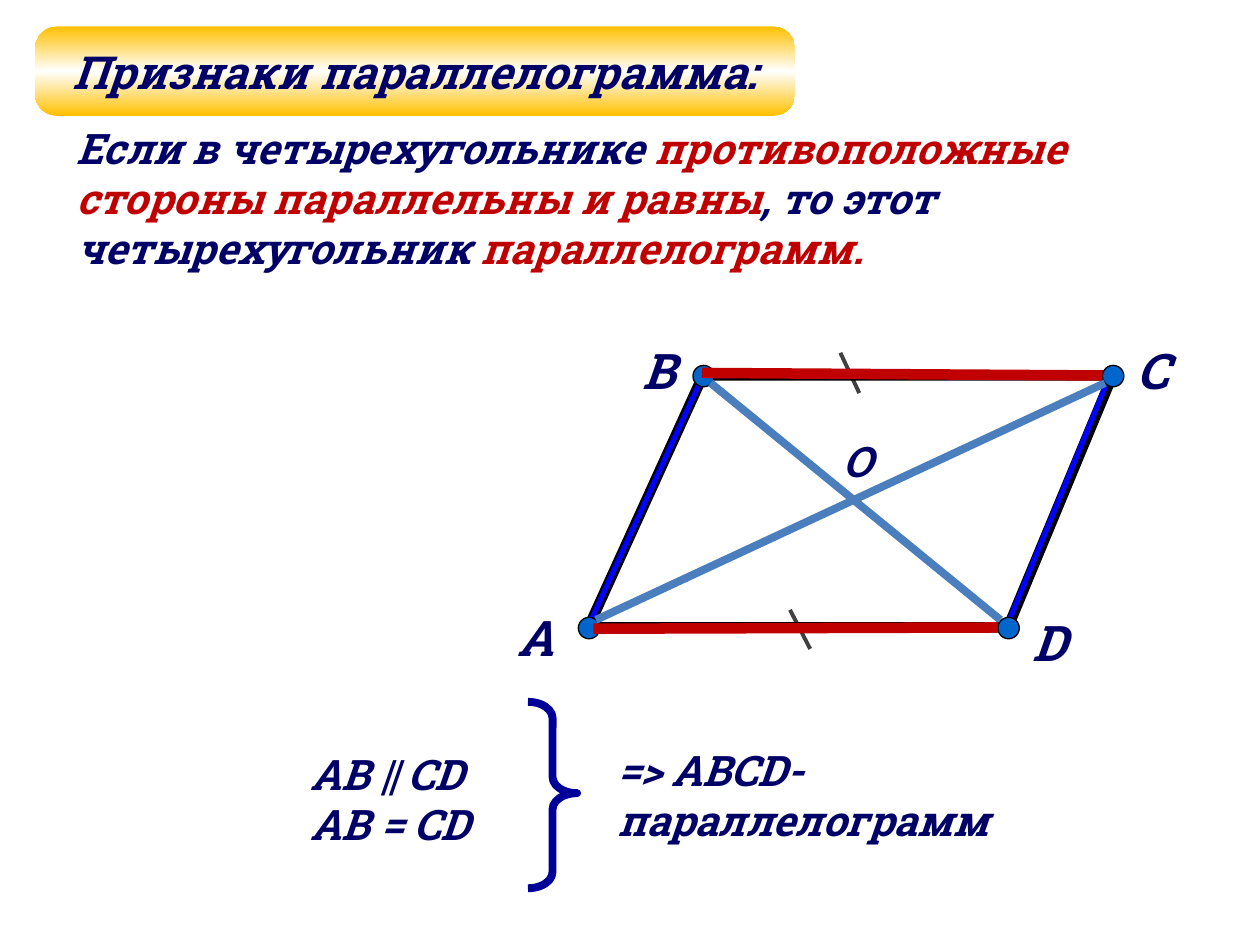
from copy import deepcopy

from lxml import etree
from pptx import Presentation
from pptx.dml.color import RGBColor
from pptx.enum.shapes import MSO_CONNECTOR, MSO_SHAPE
from pptx.enum.text import MSO_ANCHOR, MSO_AUTO_SIZE, PP_ALIGN
from pptx.oxml.ns import qn
from pptx.util import Inches, Pt

NAVY = RGBColor(0x00, 0x00, 0x66)
RED = RGBColor(0xC0, 0x00, 0x00)
BLACK = RGBColor(0x00, 0x00, 0x00)
WHITE = RGBColor(0xFF, 0xFF, 0xFF)
GOLD = RGBColor(0xFF, 0xC0, 0x00)
BRACE_BLUE = RGBColor(0x00, 0x00, 0x99)
SIDE_BLUE = RGBColor(0x00, 0x00, 0xFF)
POINT_BLUE = RGBColor(0x00, 0x66, 0xCC)
DIAGONAL_BLUE = RGBColor(0x4B, 0x7E, 0xBC)
TICK_GRAY = RGBColor(0x40, 0x40, 0x40)
FONT = "Roboto Slab"

presentation = Presentation()
presentation.slide_width = Inches(10)
presentation.slide_height = Inches(7.5)
slide = presentation.slides.add_slide(presentation.slide_layouts[5])
shapes = slide.shapes


def write_text(shape, paragraphs, size, wrap=True):
    text_frame = shape.text_frame
    text_frame.word_wrap = wrap
    for index, pieces in enumerate(paragraphs):
        paragraph = text_frame.paragraphs[0] if index == 0 else text_frame.add_paragraph()
        for text, color in pieces:
            run = paragraph.add_run()
            run.text = text
            run.font.name = FONT
            run.font.size = Pt(size)
            run.font.bold = True
            run.font.italic = True
            run.font.color.rgb = color


def add_line(start, end, color, width):
    line = shapes.add_connector(
        MSO_CONNECTOR.STRAIGHT, *[Inches(value) for value in (*start, *end)]
    )
    line.line.color.rgb = color
    line.line.width = Pt(width)
    etree.SubElement(line._element.spPr, qn("a:effectLst"))


add_line((6.27, 4.84), (6.43, 5.15), TICK_GRAY, 2.25)
add_line((6.67, 2.8), (6.82, 3.12), TICK_GRAY, 2.25)

theorem = [
    ("Если в четырехугольнике ", NAVY),
    ("противоположные стороны параллельны и равны", RED),
    (", то этот четырехугольник ", NAVY),
    ("параллелограмм.", RED),
]
text_blocks = [
    (0.51, 0.92, 8.94, 1.31, [theorem]),
    (2.37, 5.89, 2.66, 0.91, [[("AB || CD", NAVY)], [("AB = CD", NAVY)]]),
    (4.8, 5.86, 3.91, 0.91, [[("=> ABCD- параллелограмм", NAVY)]]),
]
for left, top, width, height, paragraphs in text_blocks:
    box = shapes.add_textbox(Inches(left), Inches(top), Inches(width), Inches(height))
    write_text(box, paragraphs, 24)

brace = shapes.add_shape(
    MSO_SHAPE.RIGHT_BRACE, Inches(4.19), Inches(5.57), Inches(0.39), Inches(1.48)
)
brace.adjustments[0] = 0.33
brace.adjustments[1] = 0.49
brace.shadow.inherit = False
brace.fill.background()
brace.line.color.rgb = BRACE_BLUE
brace.line.width = Pt(4.5)

vertex_labels = [("В", 5, 2.65), ("А", 4.01, 4.77), ("С", 8.92, 2.65), ("D", 8.1, 4.81)]
for letter, left, top in vertex_labels:
    label = shapes.add_textbox(Inches(left), Inches(top), Inches(0.5), Inches(0.57))
    write_text(label, [[(letter, NAVY)]], 28, wrap=False)

vertices = [(4.67, 4.98), (5.58, 2.98), (8.83, 2.98), (8, 4.98)]
vertex_a, vertex_b, vertex_c, vertex_d = vertices
corners = [(Inches(x), Inches(y)) for x, y in vertices]
builder = shapes.build_freeform(*corners[0])
builder.add_line_segments(corners[1:], close=True)
parallelogram = builder.convert_to_shape()
parallelogram.shadow.inherit = False
parallelogram.fill.background()
parallelogram.line.color.rgb = BLACK
parallelogram.line.width = Pt(6)

blue_sides = [
    (vertex_b, (8.81, 2.97)),
    ((8.81, 2.98), (8, 4.95)),
    (vertex_b, (4.67, 4.97)),
    (vertex_a, (8, 4.99)),
]
for start, end in blue_sides:
    add_line(start, end, SIDE_BLUE, 3)

for x, y in vertices:
    point = shapes.add_shape(
        MSO_SHAPE.OVAL, Inches(x - 0.08), Inches(y - 0.08), Inches(0.17), Inches(0.17)
    )
    point.shadow.inherit = False
    point.fill.solid()
    point.fill.fore_color.rgb = POINT_BLUE
    point.line.color.rgb = BLACK
    point.line.width = Pt(0.75)

add_line((5.64, 3.04), (7.94, 4.92), DIAGONAL_BLUE, 4.5)
add_line((4.73, 4.92), (8.77, 3.04), DIAGONAL_BLUE, 4.5)

center_label = shapes.add_textbox(Inches(6.59), Inches(3.41), Inches(0.47), Inches(0.51))
write_text(center_label, [[("O", NAVY)]], 24)

add_line((5.57, 2.96), (8.75, 2.98), RED, 6)
add_line((4.71, 4.99), (7.92, 4.98), RED, 6)

banner_area = [Inches(value) for value in (0.28, 0.21, 6.03, 0.71)]
banner = shapes.add_shape(MSO_SHAPE.ROUNDED_RECTANGLE, *banner_area)
banner.adjustments[0] = 0.25
banner.shadow.inherit = False
banner.line.fill.background()
banner.fill.gradient()
banner.fill.gradient_angle = 90
stop_list = banner._element.spPr.find(qn("a:gradFill")).find(qn("a:gsLst"))
stop_list.insert(1, deepcopy(stop_list[0]))
for stop, position, color in zip(banner.fill.gradient_stops, (0, 0.5, 1), (GOLD, WHITE, GOLD)):
    stop.position = position
    stop.color.rgb = color

title = shapes.title
title.left, title.top, title.width, title.height = banner_area
write_text(title, [[("Признаки параллелограмма:", NAVY)]], 26, wrap=False)
title.text_frame.auto_size = MSO_AUTO_SIZE.NONE
title.text_frame.vertical_anchor = MSO_ANCHOR.MIDDLE
title.text_frame.paragraphs[0].alignment = PP_ALIGN.CENTER
shapes._spTree.append(title._element)

presentation.save("out.pptx")
